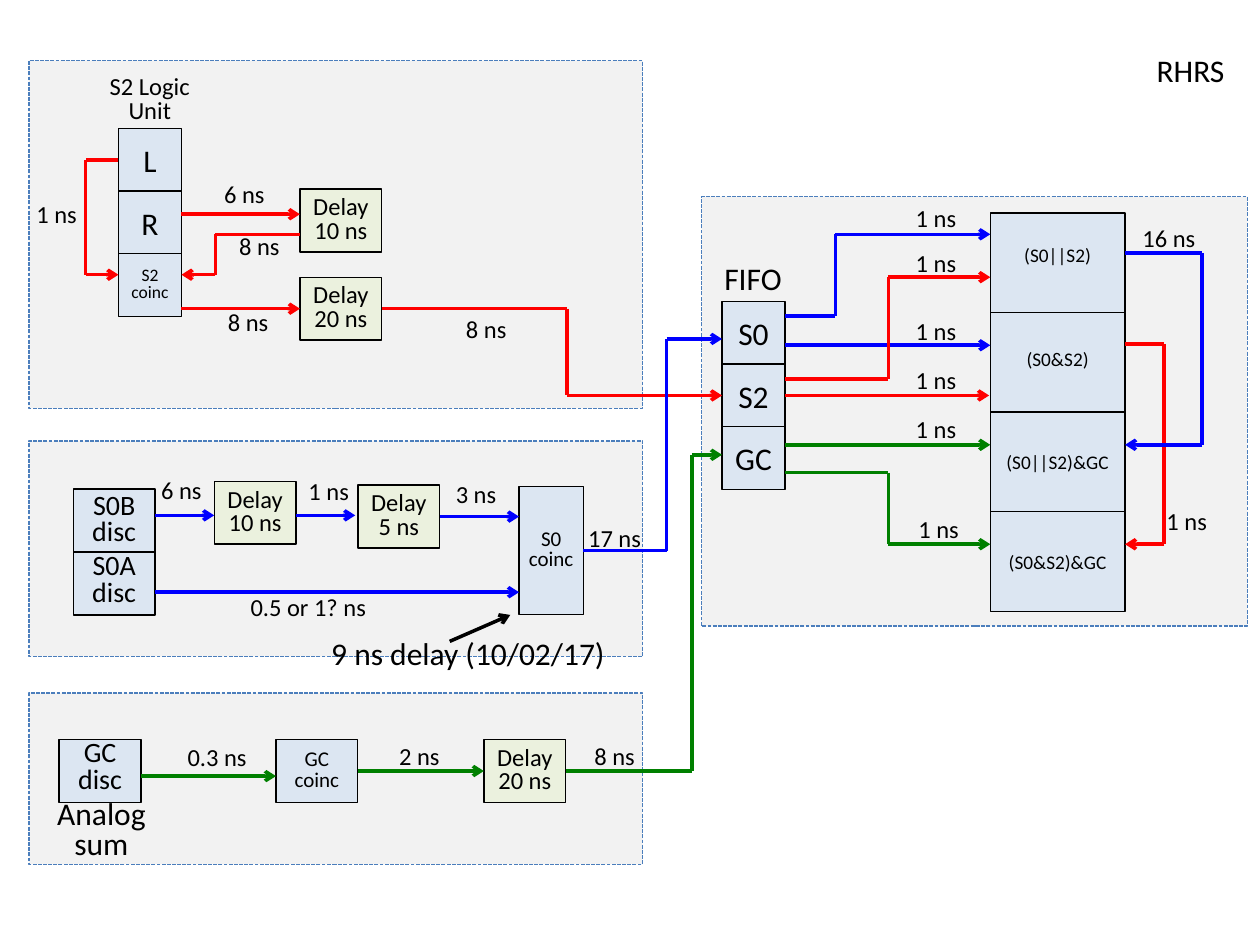
from itertools import pairwise

from lxml import etree
from pptx import Presentation
from pptx.dml import color
from pptx.enum import dml, shapes, text
from pptx.oxml import ns
from pptx.util import Pt

THEME = {
    "font": "Calibri", "ink": "000000", "panel": "F2F2F2", "panel line": "4B7EBC",
    "logic": "DCE6F2", "delay": "EBF1DE",
    "red": "FF0000", "blue": "0000FF", "green": "008000",
    "thin": 0.75, "wire": 2, "label size": 14, "title size": 18, "tight": 0.8,
}

# Panels: left, top, width, height
PANELS = [(401, 112.3, 311.8, 245.5), (16.6, 396, 350.6, 97.9),
          (16.6, 252, 350.6, 123.1), (16.6, 34.6, 350.6, 198.7)]

# Stacks of boxes: left, top, width, height, pitch,
# then per box: text, size, line spacing, lift of the text
TIGHT = THEME["tight"]
STACKS = [
    (67.7, 73.4, 36, 36, 35.8,
     [("L", 18, 1, 0), ("R", 18, 1, 0), ("S2 coinc", 10, TIGHT, 0)]),
    (412.6, 172.4, 36, 36, 35.6,
     [("S0", 18, 1, 0), ("S2", 18, 1, 0), ("GC", 18, 1, 0)]),
    (565.9, 121.7, 77, 56.9, 56.9,
     [("(S0||S2)", 11, 1, 4.3), ("(S0&S2)", 11, 1, 2),
      ("(S0||S2)&GC", 11, 1, 0), ("(S0&S2)&GC", 11, 1, 0)]),
    (41.8, 279.4, 46.8, 36, 36,
     [("S0B disc", 16, TIGHT, 0), ("S0A disc", 16, TIGHT, 1.5)]),
    (33.8, 422.6, 46.8, 36, 36, [("GC disc", 16, TIGHT, 1.5)]),
    (157.7, 422.6, 46.8, 36, 36, [("GC coinc", 12, TIGHT, 0)]),
    (296.6, 277.9, 36.7, 73.4, 73.4, [("S0 coinc", 12, TIGHT, 0)]),
]

# Delay units: left, top, delay
DELAYS = [(171.4, 108, "10 ns"), (171.4, 158.4, "20 ns"), (122.4, 275, "10 ns"),
          (204.5, 277.2, "5 ns"), (276.5, 422.6, "20 ns")]

# Wires: colour and corner points, arrow at the last point
WIRES = [
    ("red", [(67.7, 91.4), (49, 91.4), (49, 157), (67.7, 157)]),
    ("red", [(103.7, 122.4), (171.4, 122.4)]),
    ("red", [(171.4, 133.9), (123.1, 133.9), (123.1, 157), (103.7, 157)]),
    ("red", [(103.7, 176.4), (171.4, 176.4)]),
    ("red", [(218.2, 176.4), (324, 176.4), (324, 226), (412.6, 226)]),
    ("blue", [(88.6, 294.5), (122.4, 294.5)]),
    ("blue", [(169.2, 294.5), (203, 294.5)]),
    ("blue", [(251.3, 295.2), (296.6, 295.2)]),
    ("blue", [(88.6, 338.4), (296.6, 338.4)]),
    ("blue", [(333.3, 314.6), (380.9, 314.6), (380.9, 193.7), (412.6, 193.7)]),
    ("green", [(80.6, 443.5), (157.7, 443.5)]),
    ("green", [(204.5, 440.6), (276.5, 440.6)]),
    ("green", [(323.3, 440.6), (395.3, 440.6), (395.3, 259.9), (412.6, 259.9)]),
    ("blue", [(448.6, 180.7), (477.4, 180.7), (477.4, 133.9), (565.9, 133.9)]),
    ("blue", [(448.6, 197.3), (565.9, 197.3)]),
    ("red", [(448.6, 216.7), (507.6, 216.7), (507.6, 158.4), (565.9, 158.4)]),
    ("red", [(448.6, 226), (565.2, 226)]),
    ("green", [(448.6, 254.2), (565.9, 254.2)]),
    ("green", [(448.6, 270), (507.6, 270), (507.6, 311), (565.9, 311)]),
    ("red", [(642.9, 196.6), (665.3, 196.6), (665.3, 311), (642.9, 311)]),
    ("blue", [(642.9, 144.7), (686.9, 144.7), (686.9, 254.2), (642.9, 254.2)]),
    ("ink", [(257, 366.5), (291.6, 351.4)]),
]

# Wire times: text, left, top, width
TIMES = [
    ("1 ns", 13.7, 110.2, 38.2), ("6 ns", 121, 98.6, 38.2),
    ("8 ns", 129.6, 128.2, 38.2), ("8 ns", 123.1, 172.1, 38.2),
    ("8 ns", 259.2, 175.7, 38.2), ("6 ns", 85, 267.8, 38.2),
    ("1 ns", 169.2, 268.6, 38.2), ("3 ns", 253.4, 270, 38.2),
    ("0.5 or 1? ns", 136.1, 334.8, 81.4), ("17 ns", 329, 295.2, 45.4),
    ("0.3 ns", 100.1, 420.5, 48.2), ("2 ns", 221, 419.8, 38.2),
    ("8 ns", 332.6, 419.8, 38.2), ("16 ns", 645.8, 123.8, 45.4),
    ("1 ns", 659.5, 285.8, 38.2), ("1 ns", 517.7, 290.2, 38.2),
] + [("1 ns", 516.2, top, 38.2) for top in (112.3, 138.2, 177.1, 205.2, 233.3)]

# Titles on one line: text, left, top, width
TITLES = [("RHRS", 653.8, 25.9, 54), ("FIFO", 406.8, 144.7, 47.5),
          ("9 ns delay (10/02/17)", 182.2, 358.6, 172.8)]

# Wrapped captions: text, size, left, top, width, height
CAPTIONS = [("S2 Logic Unit", 14, 51.8, 40.3, 67.7, 35.3),
            ("Analog sum", 18, 18, 454.3, 79.9, 43.2)]


def rgb(name):
    return color.RGBColor.from_string(THEME[name])


def write(shape, words, size, centred=False, spacing=1, wrap=True):
    frame = shape.text_frame
    frame.text = words
    frame.word_wrap = wrap
    for paragraph in frame.paragraphs:
        paragraph.alignment = text.PP_ALIGN.CENTER if centred else text.PP_ALIGN.LEFT
        paragraph.line_spacing = spacing
        for run in paragraph.runs:
            run.font.name = THEME["font"]
            run.font.size = Pt(size)
            run.font.color.rgb = rgb("ink")


def add_rectangle(slide, area, fill, line):
    shape = slide.shapes.add_shape(shapes.MSO_SHAPE.RECTANGLE, *map(Pt, area))
    shape.shadow.inherit = False
    shape.fill.solid()
    shape.fill.fore_color.rgb = rgb(fill)
    shape.line.color.rgb = rgb(line)
    shape.line.width = Pt(THEME["thin"])
    return shape


def add_box(slide, area, fill, words, size, spacing, lift=0):
    shape = add_rectangle(slide, area, fill, "ink")
    write(shape, words, size, True, spacing)
    frame = shape.text_frame
    frame.vertical_anchor = text.MSO_ANCHOR.MIDDLE
    frame.margin_left = frame.margin_right = Pt(4)
    frame.margin_top, frame.margin_bottom = 0, Pt(2 * lift)
    return shape


def add_label(slide, area, *style, **options):
    write(slide.shapes.add_textbox(*map(Pt, area)), *style, **options)


def find_site(boxes, point):
    """Return the box and side whose middle lies at the point, if any."""
    x, y = map(Pt, point)
    for box in boxes:
        middle = box.top + box.height // 2
        for side, edge in ((1, box.left), (3, box.left + box.width)):
            if max(abs(x - edge), abs(y - middle)) < Pt(0.2):
                return box, side
    return None


def add_wire(slide, boxes, colour, points):
    segments = list(pairwise(points))
    for index, (start, end) in enumerate(segments):
        wire = slide.shapes.add_connector(
            shapes.MSO_CONNECTOR.STRAIGHT, *map(Pt, start + end))
        wire.line.color.rgb = rgb(colour)
        wire.line.width = Pt(THEME["wire"])
        properties = wire.line._get_or_add_ln()
        etree.SubElement(properties.getparent(), ns.qn("a:effectLst"))
        if index == 0 and (site := find_site(boxes, start)):
            wire.begin_connect(*site)
        if index == len(segments) - 1:
            etree.SubElement(properties, ns.qn("a:tailEnd"), type="arrow")
            if site := find_site(boxes, end):
                wire.end_connect(*site)


def main():
    presentation = Presentation()
    presentation.slide_width, presentation.slide_height = Pt(720), Pt(540)
    slide = presentation.slides.add_slide(presentation.slide_layouts[6])

    # Background panels
    for area in PANELS:
        panel = add_rectangle(slide, area, "panel", "panel line")
        panel.line.dash_style = dml.MSO_LINE.SQUARE_DOT

    # Logic and delay boxes
    boxes = []
    for left, top, width, height, pitch, items in STACKS:
        for row, item in enumerate(items):
            area = (left, top + row * pitch, width, height)
            boxes.append(add_box(slide, area, "logic", *item))
    for left, top, delay in DELAYS:
        boxes.append(add_box(slide, (left, top, 46.8, 36), "delay",
                             f"Delay\n{delay}", THEME["label size"], TIGHT))

    # Wires
    for colour, points in WIRES:
        add_wire(slide, boxes, colour, points)

    # Labels
    for labels, size, height in ((TIMES, THEME["label size"], 24.5),
                                 (TITLES, THEME["title size"], 28.8)):
        for words, left, top, width in labels:
            add_label(slide, (left, top, width, height), words, size, wrap=False)
    for words, size, *area in CAPTIONS:
        add_label(slide, area, words, size, centred=True, spacing=TIGHT)

    presentation.save("out.pptx")


if __name__ == "__main__":
    main()
